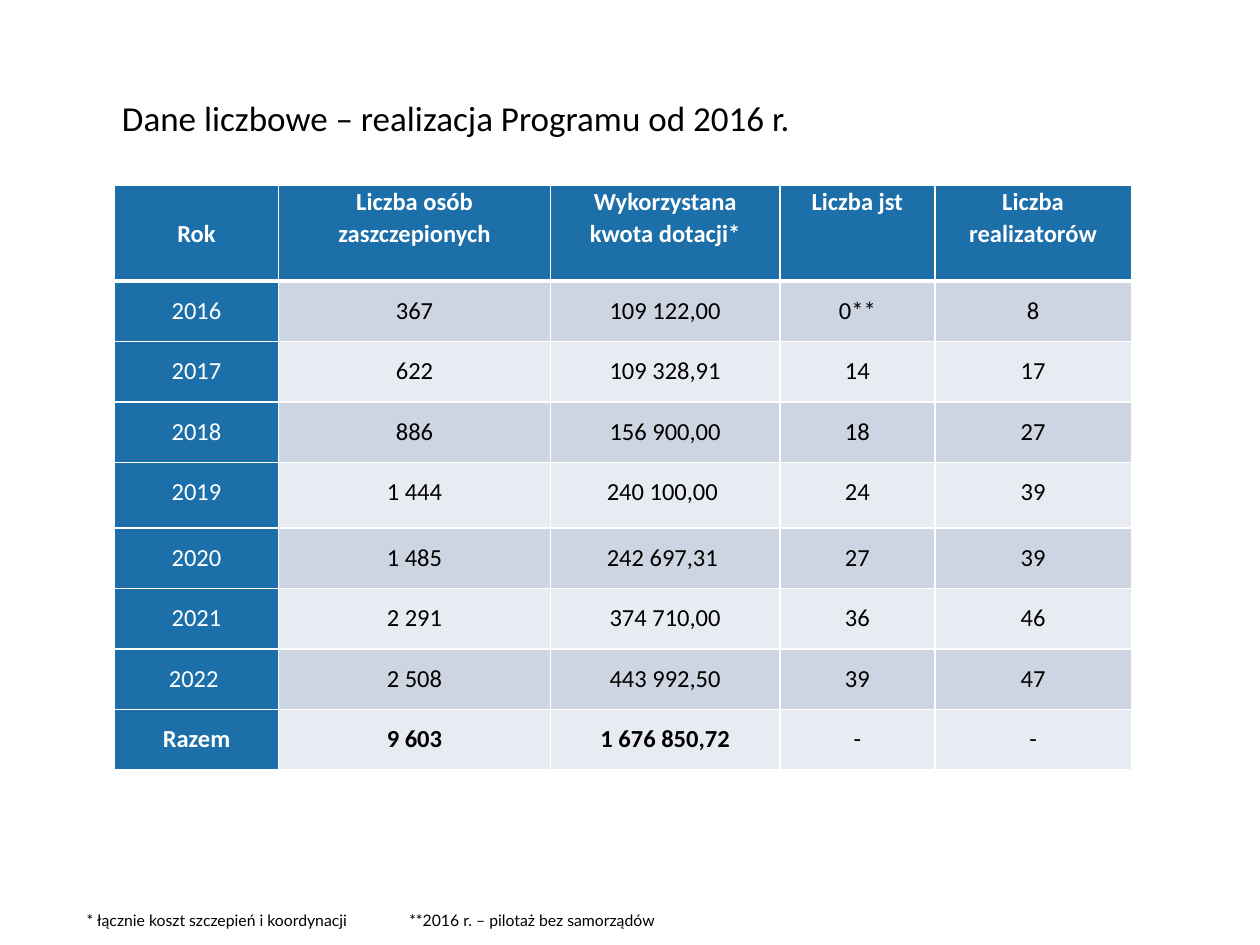
from dataclasses import dataclass

from lxml import etree
from pptx import Presentation
from pptx.dml.color import RGBColor
from pptx.enum.text import MSO_ANCHOR, PP_ALIGN
from pptx.oxml.ns import qn
from pptx.util import Inches, Pt

TOP, MIDDLE = MSO_ANCHOR.TOP, MSO_ANCHOR.MIDDLE
LEFT, CENTER, JUSTIFY = PP_ALIGN.LEFT, PP_ALIGN.CENTER, PP_ALIGN.JUSTIFY
BLANK_LAYOUT = 6

BLACK, WHITE, BLUE = "000000", "FFFFFF", "1D6FA9"
BANDS = ("CDD5E2", "E8EBF1")

COLUMN_WIDTHS = (1.3, 2.16, 1.82, 1.23, 1.56)
CELL_MARGINS = {
    "margin_left": Inches(0.07),
    "margin_right": Inches(0.07),
    "margin_top": 0,
    "margin_bottom": 0,
}


@dataclass
class TextLine:
    text: str
    box: tuple[float, float, float, float]
    font: str
    size: float
    align: PP_ALIGN = LEFT
    anchor: MSO_ANCHOR = TOP
    wrap: bool = True


@dataclass
class YearRow:
    """Cells from the column middle_from onwards are vertically centred."""
    values: tuple[str, ...]
    middle_from: int
    height: float = 0.48
    bold_columns: int = 0


@dataclass
class CellStyle:
    fill: str
    color: str
    bold: bool
    anchor: MSO_ANCHOR
    spacing: float
    top_border: float = 1
    bottom_border: float = 1


TEXT_LINES = (
    TextLine("Dane liczbowe – realizacja Programu od 2016 r.",
             (0.87, 0.7, 7.3, 0.47), "Calibri", 20, JUSTIFY, MIDDLE),
    TextLine("* łącznie koszt szczepień i koordynacji",
             (0.59, 7.18, 2.34, 0.25), "Lato", 9, wrap=False),
    TextLine("**2016 r. – pilotaż bez samorządów",
             (3.15, 7.18, 2.96, 0.25), "Lato", 9),
)

HEADER_HEIGHT = 0.76
HEADINGS = ("Rok", "Liczba osób zaszczepionych", "Wykorzystana kwota dotacji*",
            "Liczba jst", "Liczba realizatorów")
YEAR_ROWS = (
    YearRow(("2016", "367", "109 122,00", "0**", "8"), 5),
    YearRow(("2017", "622", "109 328,91", "14", "17"), 5),
    YearRow(("2018", "886", "156 900,00", "18", "27"), 5),
    YearRow(("2019", "1 444", "240 100,00 ", "24", "39"), 5, height=0.52),
    YearRow(("2020", "1 485", "242 697,31 ", "27", "39"), 1),
    YearRow(("2021", "2 291", "374 710,00", "36", "46"), 1),
    YearRow(("2022 ", "2 508", "443 992,50", "39", "47"), 0),
    YearRow(("Razem", "9 603", "1 676 850,72", "-", "-"), 1, bold_columns=3),
)


def rgb(value: str) -> RGBColor:
    return RGBColor.from_string(value)


def set_attributes(target, values: dict) -> None:
    for name, value in values.items():
        setattr(target, name, value)


def write_text(para, text: str, font: str, size: float, color: str,
               bold: bool = False) -> None:
    span = para.add_run()
    span.text = text
    set_attributes(span.font, {"name": font, "size": Pt(size), "bold": bold})
    span.font.color.rgb = rgb(color)


def add_text_line(page, line: TextLine) -> None:
    box = page.shapes.add_textbox(*map(Inches, line.box))
    frame = box.text_frame
    set_attributes(frame, {"word_wrap": line.wrap, "vertical_anchor": line.anchor})
    para = frame.paragraphs[0]
    para.alignment = line.align
    write_text(para, line.text, line.font, line.size, BLACK)


def add_borders(cell, top: float, bottom: float) -> None:
    properties = cell._tc.get_or_add_tcPr()
    widths = {"a:lnL": 1, "a:lnR": 1, "a:lnT": top, "a:lnB": bottom}
    for tag, width in widths.items():
        border = etree.SubElement(properties, qn(tag), w=str(Pt(width)))
        fill = etree.SubElement(border, qn("a:solidFill"))
        etree.SubElement(fill, qn("a:srgbClr"), val=WHITE)


def fill_cell(cell, text: str, style: CellStyle) -> None:
    set_attributes(cell, {**CELL_MARGINS, "vertical_anchor": style.anchor})
    add_borders(cell, style.top_border, style.bottom_border)
    cell.fill.solid()
    cell.fill.fore_color.rgb = rgb(style.fill)
    para = cell.text_frame.paragraphs[0]
    set_attributes(para, {"alignment": CENTER, "line_spacing": style.spacing})
    write_text(para, text, "Calibri", 14, style.color, style.bold)


def year_style(row: YearRow, row_index: int, column: int) -> CellStyle:
    centred = column >= row.middle_from
    return CellStyle(
        fill=BANDS[row_index % 2] if column else BLUE,
        color=BLACK if column else WHITE,
        bold=column < row.bold_columns,
        anchor=MIDDLE if centred else TOP,
        spacing=1.0 if centred else 1.5,
        top_border=1 if row_index else 3,
    )


def add_year_table(page) -> None:
    heights = [HEADER_HEIGHT] + [row.height for row in YEAR_ROWS]
    table = page.shapes.add_table(
        len(heights), len(COLUMN_WIDTHS), Inches(0.91), Inches(1.47),
        Inches(sum(COLUMN_WIDTHS)), Inches(sum(heights))).table
    for column, width in zip(table.columns, COLUMN_WIDTHS):
        column.width = Inches(width)
    for table_row, height in zip(table.rows, heights):
        table_row.height = Inches(height)

    for column, heading in enumerate(HEADINGS):
        anchor = TOP if column else MIDDLE
        style = CellStyle(BLUE, WHITE, True, anchor, 1.07, bottom_border=3)
        fill_cell(table.cell(0, column), heading, style)
    for row_index, row in enumerate(YEAR_ROWS):
        for column, value in enumerate(row.values):
            style = year_style(row, row_index, column)
            fill_cell(table.cell(row_index + 1, column), value, style)


def main() -> None:
    deck = Presentation()
    set_attributes(deck, {"slide_width": Inches(10), "slide_height": Inches(7.5)})
    page = deck.slides.add_slide(deck.slide_layouts[BLANK_LAYOUT])
    title, *footnotes = TEXT_LINES
    add_text_line(page, title)
    add_year_table(page)
    for footnote in footnotes:
        add_text_line(page, footnote)
    deck.save("out.pptx")


if __name__ == "__main__":
    main()
